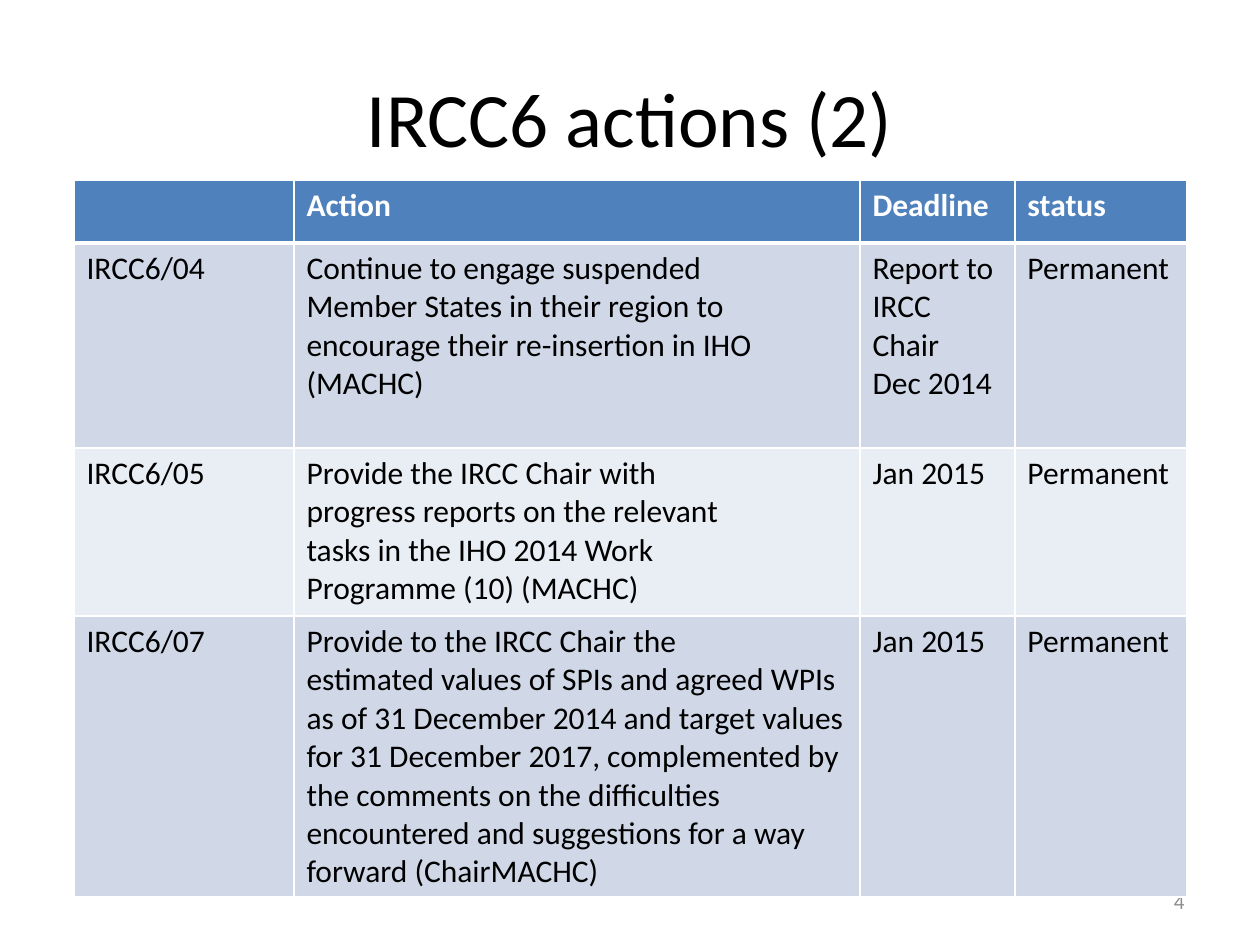
import pptx
import pptx.util
import pptx.dml.color
import pptx.enum.text
import pptx.oxml
import pptx.oxml.ns

PX = 914400 / 126  # EMU per pixel
ALIGN = pptx.enum.text.PP_ALIGN
MIDDLE = pptx.enum.text.MSO_ANCHOR.MIDDLE


def rgb(color):
    return pptx.dml.color.RGBColor.from_string(color)


def write(tf, text, size=18, color="000000", bold=False, align=ALIGN.LEFT):
    tf.word_wrap = True
    for i, line in enumerate(text.split("\n")):
        p = tf.paragraphs[0] if i == 0 else tf.add_paragraph()
        p.alignment = align
        r = p.add_run()
        r.text = line
        r.font.name = "Calibri"
        r.font.size = pptx.util.Pt(size)
        r.font.bold = bold
        r.font.color.rgb = rgb(color)


prs = pptx.Presentation()
prs.slide_width, prs.slide_height = round(1260 * PX), round(945 * PX)
s = prs.slides.add_slide(prs.slide_layouts[5])

# Title
sp = s.shapes.title
sp.left, sp.top, sp.width, sp.height = [round(v * PX) for v in (63, 38, 1134, 157)]
sp.text_frame.vertical_anchor = MIDDLE
write(sp.text_frame, "IRCC6 actions (2)", size=44, align=ALIGN.CENTER)

# Slide number
sp = s.shapes.add_textbox(*[round(v * PX) for v in (903, 876, 294, 50)])
sp.text_frame.vertical_anchor = MIDDLE
write(sp.text_frame, "4", size=12, color="8C8C8C", align=ALIGN.RIGHT)

# Actions table
rows = [
    ("", "Action", "Deadline", "status"),
    ("IRCC6/04",
     "Continue to engage suspended\nMember States in their region to\n"
     "encourage their re-insertion in IHO (MACHC)",
     "Report to\nIRCC Chair\nDec 2014", "Permanent"),
    ("IRCC6/05",
     "Provide the IRCC Chair with\nprogress reports on the relevant\n"
     "tasks in the IHO 2014 Work\nProgramme (10) (MACHC)",
     "Jan 2015", "Permanent"),
    ("IRCC6/07",
     "Provide to the IRCC Chair the\n"
     "estimated values of SPIs and agreed WPIs as of 31 December 2014 and "
     "target values for 31 December 2017, complemented by the comments on the "
     "difficulties encountered and suggestions for a way forward (ChairMACHC)",
     "Jan 2015", "Permanent"),
]
widths = [220, 566, 155, 172]
heights = [63, 205, 168, 281]
fills = ["4F81BD", "D0D8E8", "E9EDF4", "D0D8E8"]

table = s.shapes.add_table(
    len(rows), len(widths), round(74 * PX), round(180 * PX),
    round(sum(widths) * PX), round(sum(heights) * PX)).table
for column, width in zip(table.columns, widths):
    column.width = round(width * PX)

for i, row in enumerate(rows):
    table.rows[i].height = round(heights[i] * PX)
    for j, text in enumerate(row):
        cell = table.cell(i, j)
        if text:
            write(cell.text_frame, text, bold=i == 0,
                  color="FFFFFF" if i == 0 else "000000")
        # White borders, with a thick rule between header and body
        tcPr = cell._tc.get_or_add_tcPr()
        for side in "LRTB":
            thick = (i, side) in ((0, "B"), (1, "T"))
            tcPr.append(pptx.oxml.parse_xml(
                f'<a:ln{side} {pptx.oxml.ns.nsdecls("a")} w="{38100 if thick else 12700}">'
                f'<a:solidFill><a:srgbClr val="FFFFFF"/></a:solidFill></a:ln{side}>'))
        cell.fill.solid()
        cell.fill.fore_color.rgb = rgb(fills[i])

prs.save("out.pptx")
